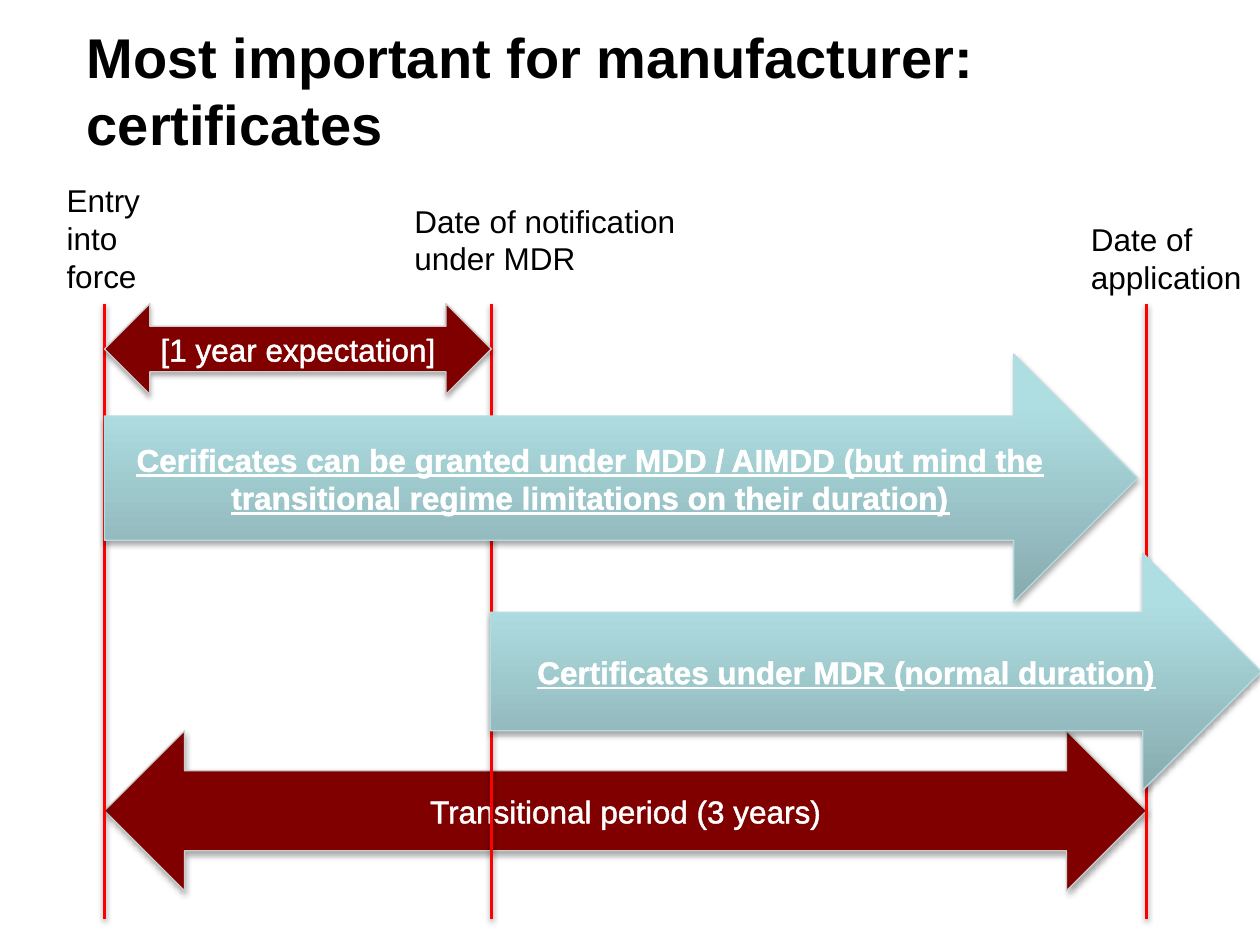
from copy import deepcopy

from lxml import etree
from pptx import Presentation
from pptx.dml.color import RGBColor
from pptx.enum.shapes import MSO_CONNECTOR, MSO_SHAPE
from pptx.enum.text import MSO_ANCHOR, MSO_AUTO_SIZE, PP_ALIGN
from pptx.oxml.ns import qn
from pptx.util import Inches, Pt

STRAIGHT = MSO_CONNECTOR.STRAIGHT
DOUBLE_ARROW = MSO_SHAPE.LEFT_RIGHT_ARROW
RIGHT_ARROW = MSO_SHAPE.RIGHT_ARROW
MIDDLE = MSO_ANCHOR.MIDDLE
LEFT, CENTER = PP_ALIGN.LEFT, PP_ALIGN.CENTER
GROW = MSO_AUTO_SIZE.SHAPE_TO_FIT_TEXT

FONT = "Arial"
COLORS = {
    "text": "000000",
    "arrow_text": "FFFFFF",
    "period": "800000",
    "period_edge": "CCCCCC",
    "certificate_edge": "B6DCDF",
    "milestone": "FF0000",
    "shadow": "000000",
}
CERTIFICATE_STOPS = [(0, "87ABAE"), (0.8, "AFDEE2"), (1, "AFE0E4")]


def rgb(name):
    return RGBColor.from_string(COLORS[name])


def write_text(shape, text, size=18, color="text", bold=False,
               underline=False, align=LEFT, outline=0):
    frame = shape.text_frame
    frame.word_wrap = True
    paragraph = frame.paragraphs[0]
    paragraph.alignment = align
    run = paragraph.add_run()
    run.text = text
    font = run.font
    font.name, font.size = FONT, Pt(size)
    font.bold, font.underline = bold, underline
    font.color.rgb = rgb(color)
    if outline:
        line = etree.Element(qn("a:ln"), w=str(Pt(outline)))
        fill = etree.SubElement(line, qn("a:solidFill"))
        etree.SubElement(fill, qn("a:srgbClr"), val=COLORS[color])
        run._r.get_or_add_rPr().insert(0, line)


def add_label(slide, box, text, **text_format):
    label = slide.shapes.add_textbox(*map(Inches, box))
    write_text(label, text, **text_format)
    label.text_frame.auto_size = GROW


def add_shadow(properties, opacity, distance):
    effects = properties.find(qn("a:effectLst"))
    if effects is None:
        effects = etree.SubElement(properties, qn("a:effectLst"))
    shadow = etree.SubElement(
        effects, qn("a:outerShdw"), blurRad=str(Pt(3.1)),
        dist=str(Pt(distance)), dir="5400000", rotWithShape="0")
    color = etree.SubElement(shadow, qn("a:srgbClr"), val=COLORS["shadow"])
    etree.SubElement(color, qn("a:alpha"), val=str(opacity * 1000))


def fill_gradient(shape, stops):
    shape.fill.gradient()
    shape.fill.gradient_angle = 90
    stop_list = next(shape._element.spPr.iter(qn("a:gsLst")))
    stop_list.append(deepcopy(stop_list[0]))
    for stop, (position, color) in zip(shape.fill.gradient_stops, stops):
        stop.position = position
        stop.color.rgb = RGBColor.from_string(color)


def add_arrow(slide, kind, box, text, edge, **text_format):
    arrow = slide.shapes.add_shape(kind, *map(Inches, box))
    arrow.line.color.rgb = rgb(edge)
    arrow.line.width = Pt(0.75)
    arrow.shadow.inherit = False
    add_shadow(arrow._element.spPr, 35, 1.8)
    arrow.text_frame.vertical_anchor = MIDDLE
    write_text(arrow, text, color="arrow_text", align=CENTER,
               outline=1.45, **text_format)
    return arrow


def add_period(slide, box, text):
    arrow = add_arrow(slide, DOUBLE_ARROW, box, text, "period_edge")
    arrow.fill.solid()
    arrow.fill.fore_color.rgb = rgb("period")


def add_certificate(slide, box, text):
    arrow = add_arrow(slide, RIGHT_ARROW, box, text, "certificate_edge",
                      bold=True, underline=True)
    fill_gradient(arrow, CERTIFICATE_STOPS)


def add_milestone(slide, x, top, bottom):
    line = slide.shapes.add_connector(
        STRAIGHT, Inches(x), Inches(top), Inches(x), Inches(bottom))
    line.line.color.rgb = rgb("milestone")
    line.line.width = Pt(2)
    add_shadow(line._element.spPr, 38, 1.6)


def add_timeline(slide, box):
    left, top, width, height = box
    right, bottom = left + width, top + height
    notification = left + 3.07

    # Whole period, behind the milestone lines
    add_period(slide, (left, top + 3.39, width, 1.27),
               "Transitional period (3 years)")
    for x in (left, notification, right):
        add_milestone(slide, x, top, bottom)

    # Certificate arrows
    add_certificate(
        slide, (left, top + 0.4, 8.2, 1.97),
        "Cerificates can be granted under MDD / AIMDD (but mind the "
        "transitional regime limitations on their duration)")
    add_certificate(slide, (notification - 0.01, top + 1.98, 6.12, 1.88),
                    "Certificates under MDR (normal duration)")

    # Milestone labels
    add_label(slide, (left - 0.4, top - 1.02, 0.87, 1.01),
              "Entry into force")
    add_label(slide, (notification - 0.71, top - 0.86, 2.36, 0.71),
              "Date of notification under MDR")
    add_label(slide, (right - 0.54, top - 0.71, 1.42, 0.71),
              "Date of application")

    # First year, in front of the milestone lines
    add_period(slide, (left, top, notification - left, 0.72),
               "[1 year expectation]")


def main():
    presentation = Presentation()
    presentation.slide_width = Inches(10)
    presentation.slide_height = Inches(7.5)
    slide = presentation.slides.add_slide(presentation.slide_layouts[6])
    add_timeline(slide, (0.83, 2.41, 8.27, 4.88))
    add_label(slide, (0.59, 0.13, 8.19, 1.18),
              "Most important for manufacturer: certificates",
              size=32, bold=True)
    presentation.save("out.pptx")


if __name__ == "__main__":
    main()
